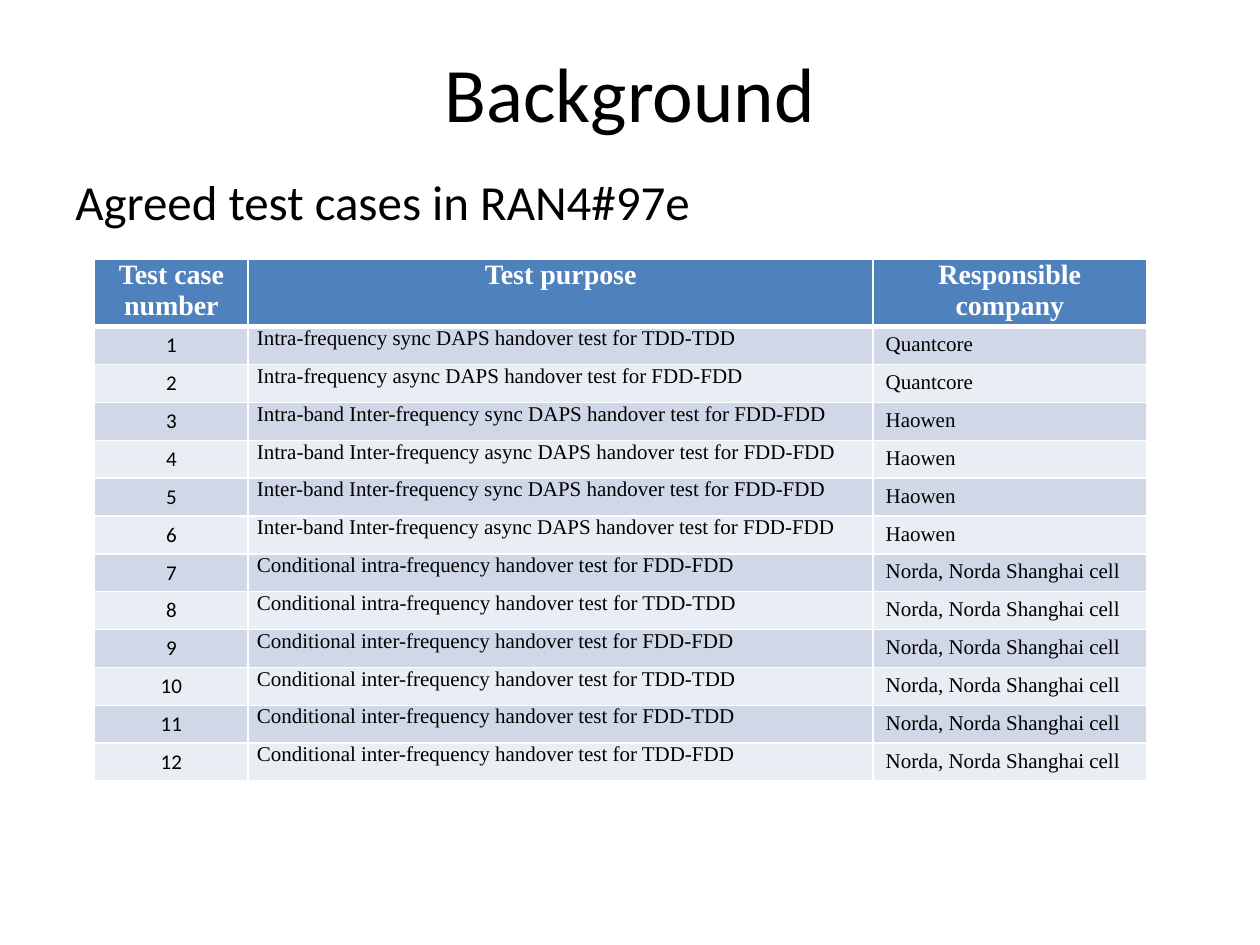
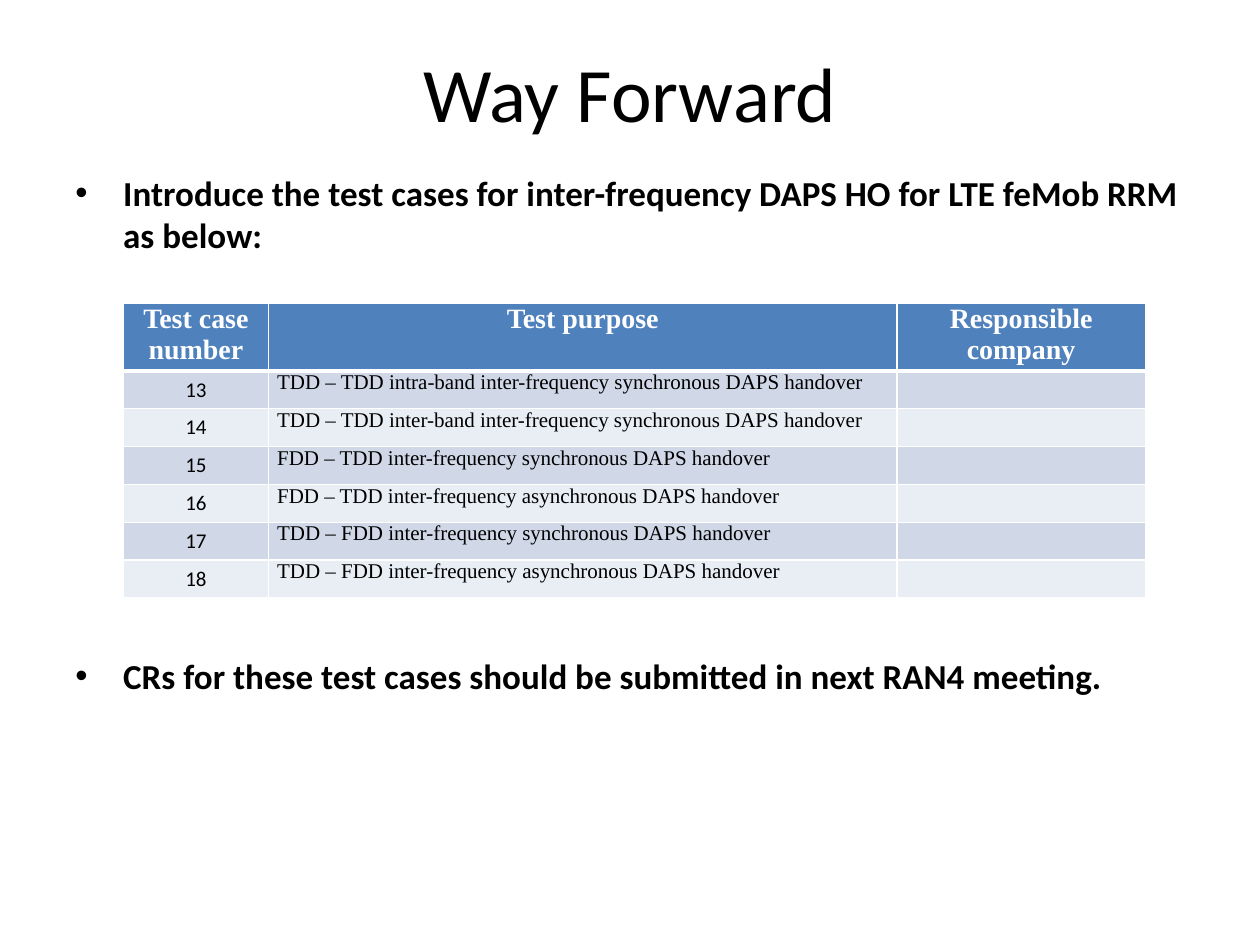
import pptx
import pptx.util
import pptx.dml.color
import pptx.enum.text
import pptx.oxml
import pptx.oxml.ns
import lxml.etree

Inches, Pt = pptx.util.Inches, pptx.util.Pt
RGB = pptx.dml.color.RGBColor
ALIGN = pptx.enum.text.PP_ALIGN
ANCHOR = pptx.enum.text.MSO_ANCHOR
qn = pptx.oxml.ns.qn

BLACK = RGB(0x00, 0x00, 0x00)
WHITE = RGB(0xFF, 0xFF, 0xFF)
BLUE = RGB(0x4F, 0x81, 0xBD)
BANDS = RGB(0xD0, 0xD8, 0xE8), RGB(0xE9, 0xED, 0xF4)
SANS, SERIF = "Calibri", "Times New Roman"

TITLE = {"name": SANS, "size": Pt(44)}
LEAD = {"name": SANS, "size": Pt(28)}
POINT = {"name": SANS, "size": Pt(20), "bold": True}
HEAD = {"name": SERIF, "size": Pt(16), "bold": True}
NUMBER = {"name": SANS, "size": Pt(12), "bold": False}
ENTRY = {"name": SERIF, "size": Pt(12), "bold": False}

TITLE_BOX = 0.5, 0.3, 9, 0.85
BODY_BOX = 0.5, 1.31, 9, 5.51
ROW = 0.3
HEADS = "Test case number", "Test purpose", "Responsible company"
VENDORS = ["Quantcore"] * 2 + ["Haowen"] * 4 + ["Norda, Norda Shanghai cell"] * 6
AGREED = [
    "Intra-frequency sync DAPS handover test for TDD-TDD",
    "Intra-frequency async DAPS handover test for FDD-FDD",
    "Intra-band Inter-frequency sync DAPS handover test for FDD-FDD",
    "Intra-band Inter-frequency async DAPS handover test for FDD-FDD",
    "Inter-band Inter-frequency sync DAPS handover test for FDD-FDD",
    "Inter-band Inter-frequency async DAPS handover test for FDD-FDD",
    "Conditional intra-frequency handover test for FDD-FDD",
    "Conditional intra-frequency handover test for TDD-TDD",
    "Conditional inter-frequency handover test for FDD-FDD",
    "Conditional inter-frequency handover test for TDD-TDD",
    "Conditional inter-frequency handover test for FDD-TDD",
    "Conditional inter-frequency handover test for TDD-FDD",
]
PLANNED = [
    "TDD – TDD intra-band inter-frequency synchronous DAPS handover",
    "TDD – TDD inter-band inter-frequency synchronous DAPS handover",
    "FDD – TDD inter-frequency synchronous DAPS handover",
    "FDD – TDD inter-frequency asynchronous DAPS handover",
    "TDD – FDD inter-frequency synchronous DAPS handover",
    "TDD – FDD inter-frequency asynchronous DAPS handover",
]


def style(item, values):
    """Set attributes of an object from a dict."""
    for key, value in values.items():
        setattr(item, key, value)


def write(para, text, font, color=BLACK, **layout):
    """Put one formatted run in a paragraph."""
    run = para.add_run()
    run.text = text
    style(run.font, font)
    run.font.color.rgb = color
    style(para, layout)


def add_box(slide, box):
    """Add a wrapping text box and return its frame."""
    frame = slide.shapes.add_textbox(*map(Inches, box)).text_frame
    frame.word_wrap = True
    return frame


def add_title(slide, text):
    """Add the centred slide title."""
    frame = add_box(slide, TITLE_BOX)
    frame.vertical_anchor = ANCHOR.MIDDLE
    write(frame.paragraphs[0], text, TITLE, alignment=ALIGN.CENTER)


def add_points(slide, box, points):
    """Add bulleted paragraphs, each given as text and space before."""
    frame = add_box(slide, box)
    for i, (text, gap) in enumerate(points):
        para = frame.add_paragraph() if i else frame.paragraphs[0]
        write(para, text, POINT, space_before=Pt(gap))
        props = para._p.get_or_add_pPr()
        props.set("marL", str(Inches(0.38)))
        props.set("indent", str(-Inches(0.38)))
        lxml.etree.SubElement(props, qn("a:buFont")).set("typeface", "Arial")
        lxml.etree.SubElement(props, qn("a:buChar")).set("char", "•")


def add_edges(cell, low):
    """Draw white cell borders, with the bottom one of a given width."""
    props = cell._tc.get_or_add_tcPr()
    for i, (side, width) in enumerate(zip("LRTB", (1, 1, 1, low))):
        line = pptx.oxml.parse_xml(
            f'<a:ln{side} {pptx.oxml.ns.nsdecls("a")} w="{Pt(width)}">'
            f'<a:solidFill><a:srgbClr val="{WHITE}"/></a:solidFill></a:ln{side}>')
        props.insert(i, line)


def fill_cell(cell, text, font, back, color=BLACK, tight=False, low=1, **layout):
    """Fill, border and label one table cell."""
    cell.fill.solid()
    cell.fill.fore_color.rgb = back
    add_edges(cell, low)
    if tight:
        style(cell, {"margin_left": Inches(0.07), "margin_right": Inches(0.07),
                     "margin_top": 0, "margin_bottom": 0})
    para = cell.text_frame.paragraphs[0]
    if text:
        write(para, text, font, color, **layout)
    else:
        end = lxml.etree.SubElement(para._p, qn("a:endParaRPr"))
        end.set("sz", str(int(font["size"].pt * 100)))


def add_cases(slide, box, widths, first, cases):
    """Add a table of numbered test cases."""
    grid = slide.shapes.add_table(len(cases) + 1, 3, *map(Inches, box)).table
    for col, width in zip(grid.columns, widths):
        col.width = Inches(width)
    for row in grid.rows:
        row.height = Inches(ROW)
    grid.rows[0].height = Inches(0.5)
    for i, text in enumerate(HEADS):
        fill_cell(grid.cell(0, i), text, HEAD, BLUE, WHITE, tight=True, low=3,
                  alignment=ALIGN.CENTER, space_after=Pt(9))
    for i, (goal, firm) in enumerate(cases):
        back = BANDS[i % 2]
        number, purpose, owner = grid.rows[i + 1].cells
        fill_cell(number, str(first + i), NUMBER, back, alignment=ALIGN.CENTER)
        fill_cell(purpose, goal, ENTRY, back, tight=True)
        fill_cell(owner, firm, ENTRY, back)


def add_background(deck):
    """Build the slide of agreed test cases."""
    slide = deck.slides.add_slide(deck.slide_layouts[6])
    add_title(slide, "Background")
    frame = add_box(slide, BODY_BOX)
    write(frame.paragraphs[0], "Agreed test cases in RAN4#97e", LEAD,
          space_before=Pt(5.6))
    add_cases(slide, (0.75, 2.06, 8.35, 4.14), (1.22, 4.96, 2.17), 1,
              list(zip(AGREED, VENDORS)))


def add_forward(deck):
    """Build the slide of planned test cases."""
    slide = deck.slides.add_slide(deck.slide_layouts[6])
    add_title(slide, "Way Forward")
    add_points(slide, BODY_BOX, [
        ("Introduce the test cases for inter-frequency DAPS HO for LTE feMob RRM "
         "as below:", 4),
        ("CRs for these test cases should be submitted in next RAN4 meeting.", 228),
    ])
    add_cases(slide, (0.98, 2.41, 8.11, 2.33), (1.15, 4.99, 1.97), 13,
              [(goal, "") for goal in PLANNED])


def main():
    """Build and save the deck."""
    deck = pptx.Presentation()
    style(deck, {"slide_width": Inches(10), "slide_height": Inches(7.5)})
    add_background(deck)
    add_forward(deck)
    deck.save("out.pptx")


if __name__ == "__main__":
    main()
